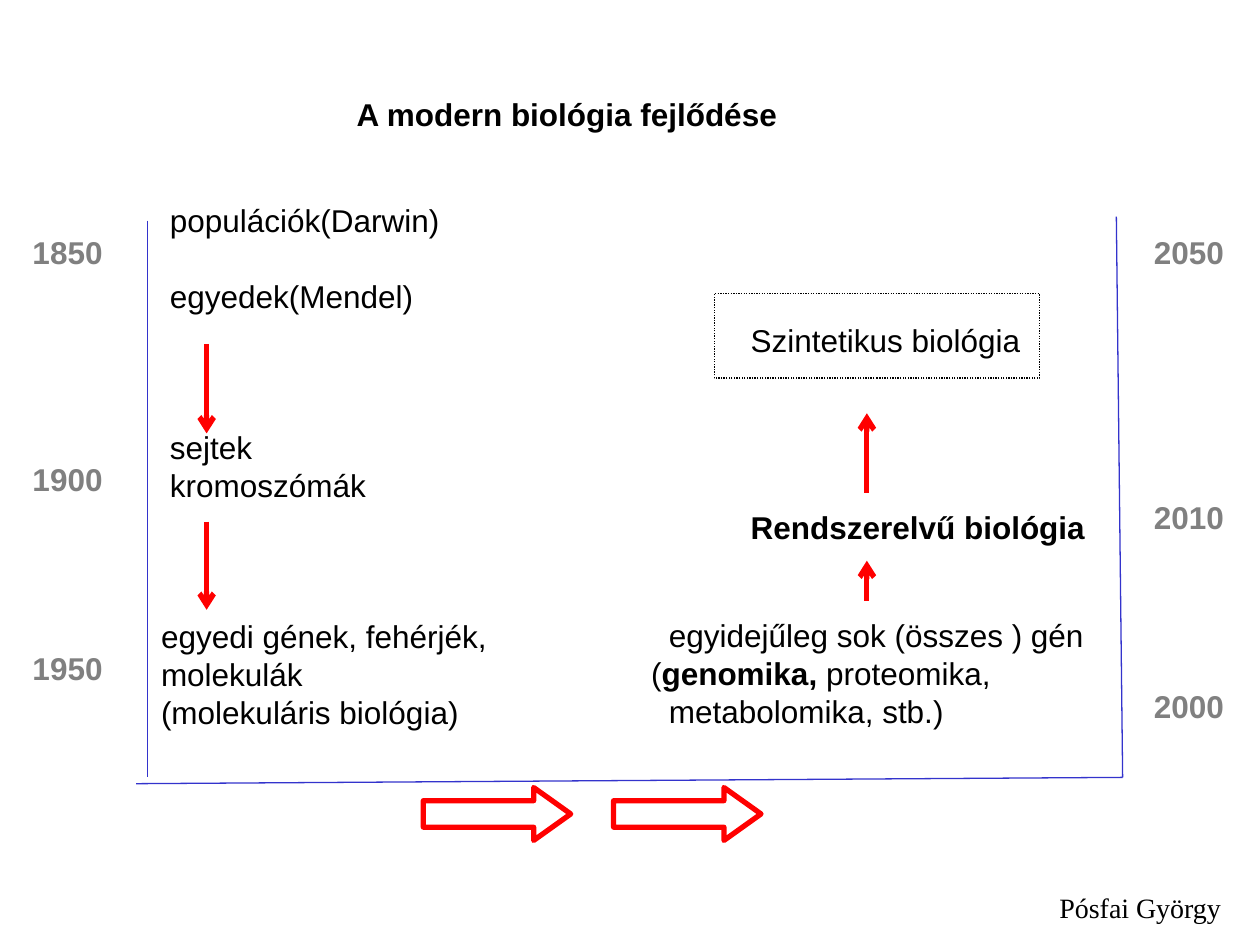
from pptx import Presentation
from pptx.dml.color import RGBColor
from pptx.enum import dml, shapes, text
from pptx.oxml.ns import qn
from pptx.util import Inches, Pt
from lxml import etree

BLACK = RGBColor(0, 0, 0)
GRAY = RGBColor(0x80, 0x80, 0x80)
RED = RGBColor(0xFF, 0, 0)
BLUE = RGBColor(0x33, 0x33, 0xCC)

deck = Presentation()
deck.slide_width, deck.slide_height = Inches(10), Inches(7.5)
slide = deck.slides.add_slide(deck.slide_layouts[5])
items = slide.shapes


def write(words, x, y, w, h=0.4, box=None, size=18, font="Arial",
          color=BLACK, bold=False, wrap=False, dents=()):
    if box is None:
        box = items.add_textbox(0, 0, 0, 0)
    box.left, box.top, box.width, box.height = map(Inches, (x, y, w, h))
    frame = box.text_frame
    frame.auto_size = text.MSO_AUTO_SIZE.NONE
    frame.word_wrap = wrap
    frame.vertical_anchor = text.MSO_ANCHOR.TOP
    for n, line in enumerate(words.split("\n")):
        para = frame.paragraphs[0] if n == 0 else frame.add_paragraph()
        para.alignment = text.PP_ALIGN.LEFT
        if n < len(dents):
            para._p.get_or_add_pPr().set("marL", str(Inches(dents[n])))
        for k, part in enumerate(line.split("*")):
            if part:
                run = para.add_run()
                run.text = part
                run.font.size = Pt(size)
                run.font.name = font
                run.font.bold = bold or k % 2 == 1
                run.font.color.rgb = color


def draw(x1, y1, x2, y2, color, width, head=False):
    line = items.add_connector(shapes.MSO_CONNECTOR.STRAIGHT,
                               *map(Inches, (x1, y1, x2, y2)))
    line.line.color.rgb = color
    line.line.width = Pt(width)
    if head:
        etree.SubElement(line.line._get_or_add_ln(), qn("a:tailEnd"), type="arrow")
    etree.SubElement(line._element.spPr, qn("a:effectLst"))


write("A modern biológia fejlődése", 2.73, 0.7, 3.57, box=items.title, bold=True)

for x1, y1, x2, y2, width in [(1.17, 1.75, 1.17, 6.17, 1),
                              (1.08, 6.22, 8.91, 6.17, 0.75),
                              (8.91, 6.17, 8.86, 1.72, 0.75)]:
    draw(x1, y1, x2, y2, BLUE, width)

for x, marks in [(0.16, [("1850", 1.8), ("1900", 3.6), ("1950", 5.1)]),
                 (9.06, [("2050", 1.8), ("2010", 3.9), ("2000", 5.4)])]:
    for year, y in marks:
        write(year, x, y, 0.94, color=GRAY, bold=True, wrap=True)

write("populációk(Darwin)", 1.25, 1.55, 2.4)
write("egyedek(Mendel)", 1.25, 2.15, 2.4)
write("sejtek\nkromoszómák", 1.25, 3.35, 2.4, 0.7)
write("egyedi gének, fehérjék,\nmolekulák\n(molekuláris biológia)", 1.18, 4.85, 2.9, 1.01)

frame = items.add_shape(shapes.MSO_SHAPE.RECTANGLE,
                        *map(Inches, (5.67, 2.33, 2.58, 0.67)))
frame.shadow.inherit = False
frame.fill.background()
frame.line.color.rgb = BLACK
frame.line.width = Pt(0.75)
frame.line.dash_style = dml.MSO_LINE.ROUND_DOT

write("Szintetikus biológia", 5.86, 2.5, 2.36)
write("Rendszerelvű biológia", 5.86, 3.98, 2.88, bold=True)
write("egyidejűleg sok (összes ) gén\n(*genomika,* proteomika,\nmetabolomika, stb.)",
      5.07, 4.84, 3.67, 1.01, dents=(0.14, 0, 0.14))

for x, start, end in [(1.64, 2.73, 3.44), (1.64, 4.14, 4.84),
                      (6.88, 4.77, 4.45), (6.88, 3.91, 3.28)]:
    draw(x, start, x, end, RED, 3, head=True)

for x in (3.36, 4.87):
    arrow = items.add_shape(shapes.MSO_SHAPE.RIGHT_ARROW,
                            *map(Inches, (x, 6.25, 1.17, 0.42)))
    arrow.adjustments[0], arrow.adjustments[1] = 0.5, 0.7
    arrow.shadow.inherit = False
    arrow.fill.background()
    arrow.line.color.rgb = RED
    arrow.line.width = Pt(3)

write("Pósfai György", 8.31, 7.02, 1.5, 0.37, size=16, font="Times New Roman")

deck.save("out.pptx")
